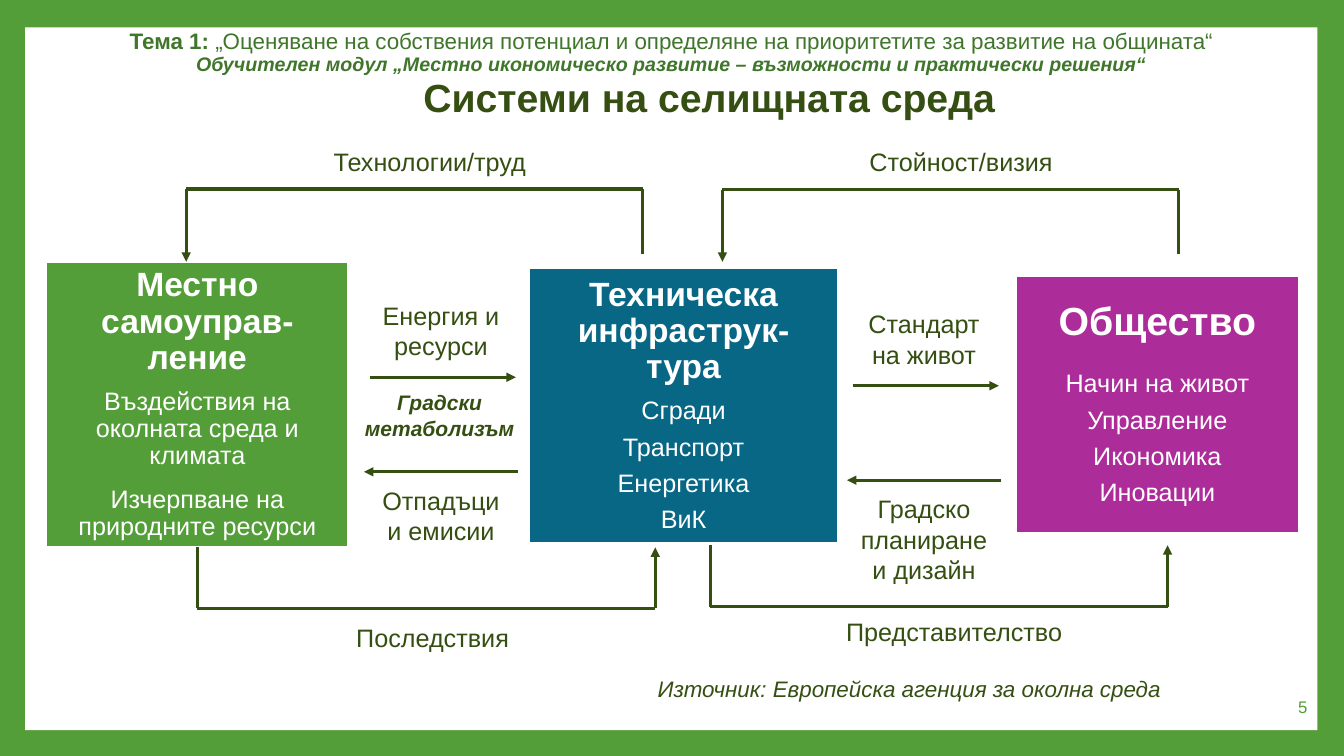
import pptx
import pptx.util
import pptx.dml.color
import pptx.enum.shapes
import pptx.enum.text
import pptx.oxml.ns
import lxml.etree
from dataclasses import dataclass

Pt = pptx.util.Pt
ALIGN = pptx.enum.text.PP_ALIGN
ANCHOR = pptx.enum.text.MSO_ANCHOR
TOP, LEFT, BOTTOM, RIGHT = range(4)


@dataclass(frozen=True)
class Theme:
    font: str = "Arial"
    green: str = "549E39"
    blue: str = "076785"
    purple: str = "AC2C9A"
    white: str = "FFFFFF"
    ink: str = "354F12"
    header: str = "3F762B"
    title_size: int = 28
    heading_size: int = 24
    body_size: int = 18
    topic_size: int = 16
    module_size: int = 14
    accent_size: int = 15
    number_size: int = 12
    line_width: float = 2.25


THEME = Theme()


def rgb(value):
    return pptx.dml.color.RGBColor.from_string(value)


def add_text(frame, text, size=THEME.body_size, color=THEME.ink, bold=False, italic=False,
             align=ALIGN.CENTER, spacing=None, after=0, same_paragraph=False):
    """Append a formatted run, in a new paragraph unless told otherwise."""
    paragraph = frame.paragraphs[-1]
    if paragraph.runs and not same_paragraph:
        paragraph = frame.add_paragraph()
    paragraph.alignment = align
    paragraph.space_after = Pt(after)
    if spacing:
        paragraph.line_spacing = spacing
    run = paragraph.add_run()
    run.text = text
    run.font.name = THEME.font
    run.font.size = Pt(size)
    run.font.bold, run.font.italic = bold, italic
    run.font.color.rgb = rgb(color)


def text_frame(slide, box, anchor=ANCHOR.TOP):
    frame = slide.shapes.add_textbox(*map(Pt, box)).text_frame
    frame.word_wrap = True
    frame.vertical_anchor = anchor
    return frame


def label(slide, box, text, **style):
    add_text(text_frame(slide, box), text, **style)


def rectangle(slide, box, fill):
    panel = slide.shapes.add_shape(pptx.enum.shapes.MSO_SHAPE.RECTANGLE, *map(Pt, box))
    panel.shadow.inherit = False
    panel.fill.solid()
    panel.fill.fore_color.rgb = rgb(fill)
    panel.line.color.rgb = rgb(THEME.white)
    panel.line.width = Pt(1.5)
    return panel


def connector(slide, start, end, arrow=False):
    link = slide.shapes.add_connector(pptx.enum.shapes.MSO_CONNECTOR.STRAIGHT,
                                      *map(Pt, (*start, *end)))
    link.line.color.rgb = rgb(THEME.ink)
    link.line.width = Pt(THEME.line_width)
    qn = pptx.oxml.ns.qn
    if arrow:
        lxml.etree.SubElement(link.line._get_or_add_ln(), qn("a:tailEnd"), type="triangle")
    lxml.etree.SubElement(link._element.spPr, qn("a:effectLst"))
    return link


def header(slide, box):
    """Topic, module and slide title."""
    left, top, width, height = box
    topic = text_frame(slide, box, ANCHOR.MIDDLE)
    style = dict(color=THEME.header, spacing=0.9)
    add_text(topic, "Тема 1: ", size=THEME.topic_size, bold=True, **style)
    add_text(topic, "„Оценяване на собствения потенциал и определяне на приоритетите "
             "за развитие на общината“", size=THEME.topic_size, same_paragraph=True, **style)
    add_text(topic, "Обучителен модул „Местно икономическо развитие – възможности и "
             "практически решения“", size=THEME.module_size, bold=True, italic=True, **style)
    label(slide, (left + 264.5, top + 25, 431, 41), "Системи на селищната среда",
          size=THEME.title_size, bold=True)


def system(slide, box, fill, heading, items, size=THEME.heading_size, heading_gap=8.5, gap=6.5):
    """Coloured block with a heading and its items."""
    block = rectangle(slide, box, fill)
    frame = block.text_frame
    frame.word_wrap = True
    frame.vertical_anchor = ANCHOR.MIDDLE
    frame.margin_left = frame.margin_right = Pt(19.5)
    frame.margin_top = frame.margin_bottom = Pt(19.5)
    style = dict(color=THEME.white, spacing=0.9)
    add_text(frame, heading, size=size, bold=True, after=heading_gap, **style)
    for item in items:
        add_text(frame, item, after=gap, **style)
    return block


def exchange(slide, box, forward, backward):
    """Two opposite arrows between neighbouring blocks, with labels."""
    left, top, width, height = box
    label(slide, (left, top, width, 51), forward)
    connector(slide, (left + 5, top + 58.5), (left + 109.5, top + 58.5), arrow=True)
    connector(slide, (left + 111, top + 126), (left + 1, top + 126), arrow=True)
    label(slide, (left, top + 132, width, height - 132), backward)


def loop(slide, start, level, end, caption, caption_box, source=None):
    """Three-part bracket that leaves one block and points at another."""
    corners = [(start[0], level), (end[0], level)]
    leg = connector(slide, start, corners[0])
    if source is not None:
        leg.begin_connect(source, BOTTOM)
    connector(slide, *corners)
    connector(slide, corners[1], end, arrow=True)
    label(slide, caption_box, caption)


def footer(slide, box):
    """Source and slide number."""
    left, top, width, height = box
    label(slide, (left, top, 388, 27), "Източник: Европейска агенция за околна среда",
          size=THEME.topic_size, italic=True)
    number = text_frame(slide, (left + width - 134, top + 11.5, 134, 29), ANCHOR.MIDDLE)
    add_text(number, "5", size=THEME.number_size, color=THEME.green, align=ALIGN.RIGHT)


def urban_systems(slide):
    slide.background.fill.solid()
    slide.background.fill.fore_color.rgb = rgb(THEME.green)
    rectangle(slide, (18, 19.5, 923, 502), THEME.white).line.fill.background()
    header(slide, (26.5, 24, 906.5, 28))

    # Three systems
    government = system(
        slide, (33, 187, 216, 204), THEME.green, "Местно самоуправ-ление",
        ["Въздействия на околната среда и климата", "Изчерпване на природните ресурси"], gap=12)
    system(slide, (378, 191.5, 220.5, 196.5), THEME.blue, "Техническа инфраструк-тура",
           ["Сгради", "Транспорт", "Енергетика", "ВиК"])
    system(slide, (725.5, 197.5, 202.5, 183), THEME.purple, "Общество",
           ["Начин на живот", "Управление", "Икономика", "Иновации"],
           size=THEME.title_size, heading_gap=19)

    # Exchanges between neighbours
    exchange(slide, (259, 211, 112, 183), "Енергия и ресурси", "Отпадъци и емисии")
    exchange(slide, (604, 217, 112, 205), "Стандарт на живот", "Градско планиране и дизайн")
    label(slide, (252.5, 275, 123, 44), "Градски метаболизъм",
          size=THEME.accent_size, bold=True, italic=True)

    # Loops above and below
    loop(slide, (459, 181.5), 135, (133, 187), "Технологии/труд", (222, 101, 170, 29))
    loop(slide, (842, 181.5), 135.5, (516, 187), "Стойност/визия", (601.5, 101, 170, 29))
    loop(slide, (141, 391), 434.5, (468, 391), "Последствия", (224, 441, 170, 29), government)
    loop(slide, (507.5, 389.5), 433.5, (834, 389.5), "Представителство",
         (591, 437, 181, 29))

    footer(slide, (455.5, 479, 485.5, 40))


def main():
    deck = pptx.Presentation()
    deck.slide_width, deck.slide_height = Pt(960), Pt(540)
    urban_systems(deck.slides.add_slide(deck.slide_layouts[6]))
    deck.save("out.pptx")


if __name__ == "__main__":
    main()
